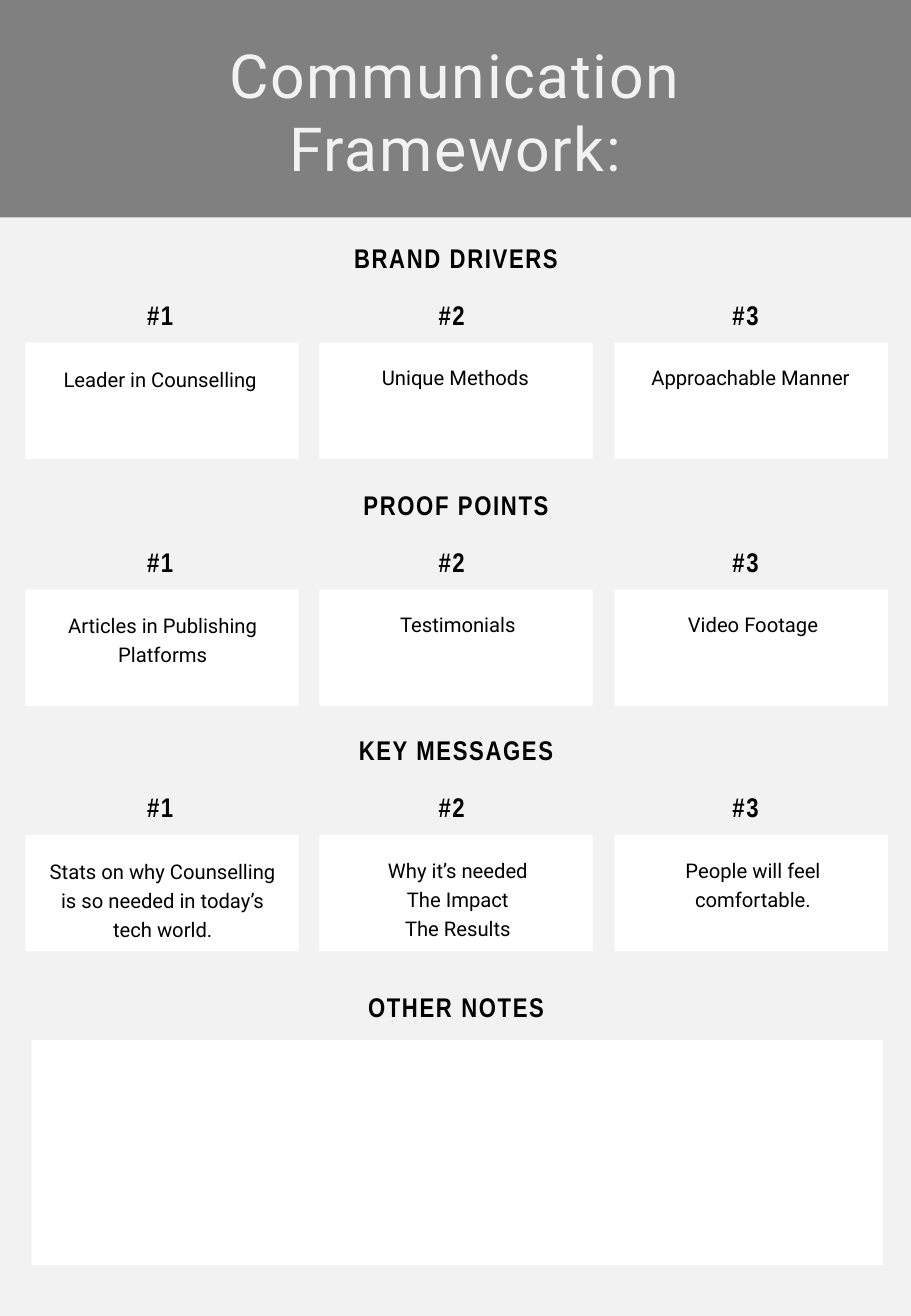
from dataclasses import dataclass

from pptx import Presentation
from pptx.dml.color import RGBColor
from pptx.enum.shapes import MSO_SHAPE
from pptx.enum.text import PP_ALIGN
from pptx.util import Inches, Pt

RECT = MSO_SHAPE.RECTANGLE
CENTER = PP_ALIGN.CENTER


@dataclass(frozen=True)
class Theme:
    band: str = "808080"
    page: str = "F2F2F2"
    card: str = "FFFFFF"
    ink: str = "000000"
    sans: str = "Roboto"
    narrow: str = "Arial Narrow"
    title: int = 36
    head: int = 16
    body: int = 12


THEME = Theme()
WIDTH, HEIGHT = 7.5, 10.83

# Text styles: font and paragraph values, letter spacing in points
TITLE = {"font": {"name": THEME.sans, "size": Pt(THEME.title)},
         "para": {"alignment": CENTER}, "color": THEME.page, "track": 1}
HEAD = {"font": {"name": THEME.narrow, "size": Pt(THEME.head), "bold": True},
        "para": {"alignment": CENTER, "space_before": Pt(9)},
        "color": THEME.ink, "track": 1}
BODY = {"font": {"name": THEME.sans, "size": Pt(THEME.body)},
        "para": {"alignment": CENTER, "space_before": Pt(9),
                 "line_spacing": 1.2},
        "color": THEME.ink, "track": 0}

# Left edge of each column: card and number
COLUMNS = [(0.21, 0.24), (2.63, 2.64), (5.06, 5.06)]

# Section heading, top, left of the first text, texts
SECTIONS = [
    ("BRAND DRIVERS", 1.94, 0.29,
     ["Leader in Counselling", "Unique Methods", "Approachable Manner"]),
    ("PROOF POINTS", 3.97, 0.31,
     ["Articles in Publishing Platforms", "Testimonials", "Video Footage"]),
    ("KEY MESSAGES", 5.99, 0.31,
     ["Stats on why Counselling is so needed in today’s tech world.",
      "Why it’s needed\nThe Impact\nThe Results",
      "People will feel comfortable."]),
]


def apply(target, values):
    for name, value in values.items():
        setattr(target, name, value)


def add_box(slide, box, color):
    shape = slide.shapes.add_shape(RECT, *map(Inches, box))
    shape.shadow.inherit = False
    shape.fill.solid()
    shape.fill.fore_color.rgb = RGBColor.from_string(color)
    shape.line.fill.background()


def add_text(slide, box, text, style):
    frame = slide.shapes.add_textbox(*map(Inches, box)).text_frame
    frame.word_wrap = True
    para = frame.paragraphs[0]
    para.text = text.replace("\n", "\v")
    apply(para, style["para"])
    for run in para.runs:
        apply(run.font, style["font"])
        run.font.color.rgb = RGBColor.from_string(style["color"])
        if style["track"]:
            run._r.get_or_add_rPr().set("spc", str(style["track"] * 100))


def add_head(slide, top, text):
    add_text(slide, (2.76, top, 1.99, 0.41), text, HEAD)


def add_banner(slide, left, top, width, height):
    add_box(slide, (left, top, width, height), THEME.band)
    add_text(slide, (left + 0.54, top + 0.26, 6.42, 1.31),
             "Communication Framework:", TITLE)


def add_section(slide, head, top, start, texts):
    add_head(slide, top, head)
    for i, ((card, number), text) in enumerate(zip(COLUMNS, texts)):
        add_text(slide, (number, top + 0.47, 2.22, 0.41), f"#{i + 1} ", HEAD)
        add_box(slide, (card, top + 0.88, 2.25, 0.96), THEME.card)
        drop = 0.98 if i else 0.99
        add_text(slide, (start + 2.43 * i, top + drop, 2.06, 0.81),
                 text, BODY)


def add_notes(slide, left, top, width, height):
    add_head(slide, top, "OTHER NOTES")
    add_box(slide, (left, top + 0.46, width, height - 0.46), THEME.card)


def main():
    deck = Presentation()
    deck.slide_width, deck.slide_height = Inches(WIDTH), Inches(HEIGHT)
    slide = deck.slides.add_slide(deck.slide_layouts[6])
    # Page ground and title band
    add_banner(slide, 0, 0, WIDTH, 1.81)
    add_box(slide, (0, 1.79, WIDTH, HEIGHT - 1.79), THEME.page)
    # Three card rows, then the notes
    for section in SECTIONS:
        add_section(slide, *section)
    add_notes(slide, 0.26, 8.1, 7.01, 2.31)
    deck.save("out.pptx")


if __name__ == "__main__":
    main()
